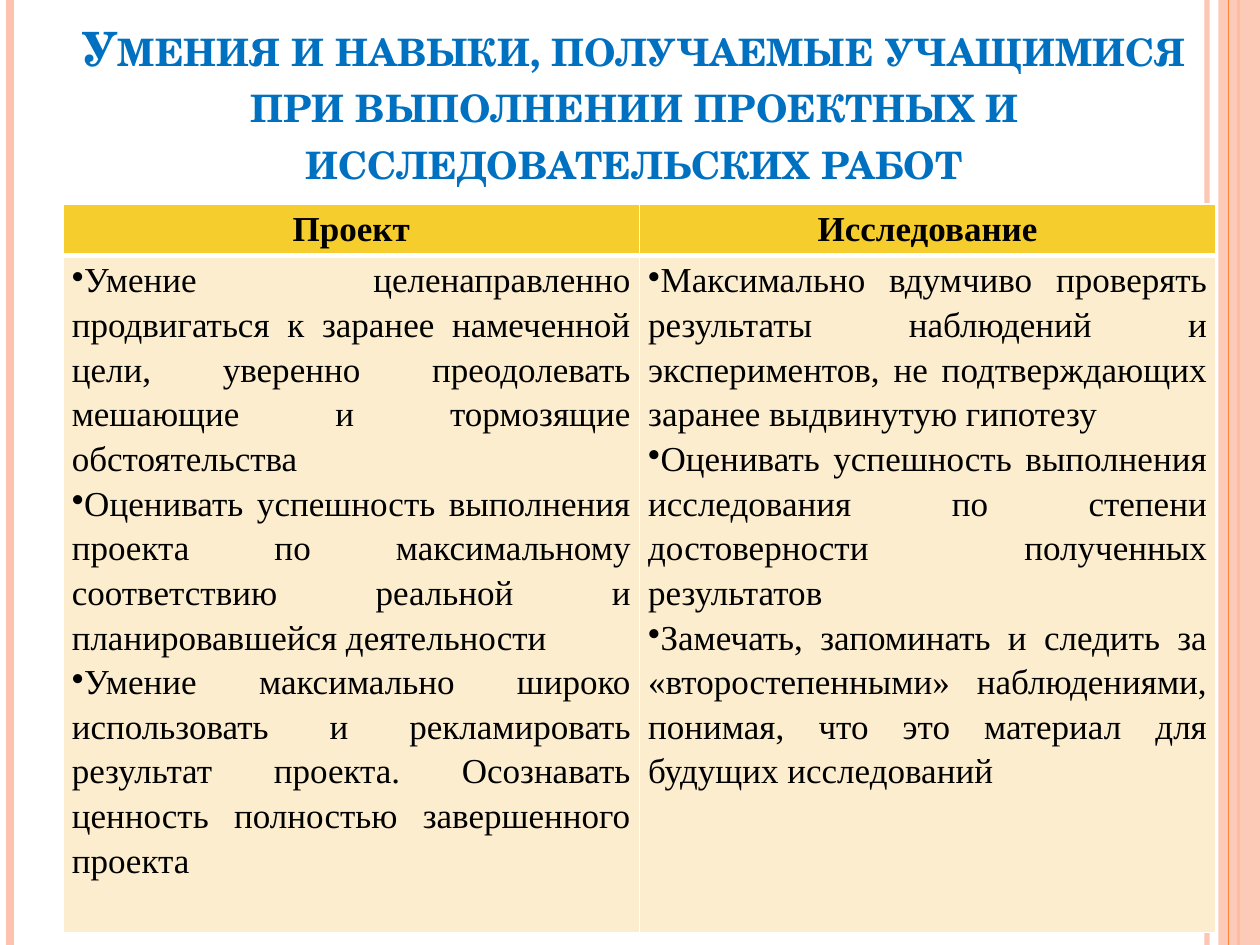
import pptx
import pptx.dml.color
import pptx.enum.shapes
import pptx.enum.text
import pptx.oxml
import pptx.oxml.ns
import pptx.util
from lxml import etree

Inches, Pt = pptx.util.Inches, pptx.util.Pt
ALIGN = pptx.enum.text.PP_ALIGN
qn = pptx.oxml.ns.qn

COLORS = {
    "title": "0070C0",
    "text": "000000",
    "stripe": "FEC3AE",
    "accent": "FE8637",
    "header": "F5CD2D",
    "body": "FBEDCD",
    "border": "FFFFFF",
}

TITLE = "Умения и навыки, получаемые учащимися при выполнении проектных и исследовательских работ"
SKILLS = {
    "Проект": [
        "Умение целенаправленно продвигаться к заранее намеченной цели, уверенно преодолевать "
        "мешающие и тормозящие обстоятельства",
        "Оценивать успешность выполнения проекта по максимальному соответствию реальной и "
        "планировавшейся деятельности",
        "Умение максимально широко использовать и рекламировать результат проекта. Осознавать "
        "ценность полностью завершенного проекта",
    ],
    "Исследование": [
        "Максимально вдумчиво проверять результаты наблюдений и экспериментов, не "
        "подтверждающих заранее выдвинутую гипотезу",
        "Оценивать успешность выполнения исследования по степени достоверности полученных результатов",
        "Замечать, запоминать и следить за «второстепенными» наблюдениями, понимая, что это "
        "материал для будущих исследований",
    ],
}


def rgb(name):
    return pptx.dml.color.RGBColor.from_string(COLORS[name])


def set_opacity(sp, percent):
    clr = sp._element.spPr.find(".//" + qn("a:srgbClr"))
    etree.SubElement(clr, qn("a:alpha")).set("val", str(percent * 1000))


def write(p, text, font="Times New Roman", size=20, color="text", bold=False,
          align=ALIGN.CENTER, spacing=None, bullet=None, small_caps=False):
    p.alignment = align
    if spacing:
        p.line_spacing = spacing
    if bullet:
        pPr = p._p.get_or_add_pPr()
        pPr.set("marL", "0")
        pPr.set("indent", "0")
        etree.SubElement(pPr, qn("a:buChar")).set("char", bullet)
    r = p.add_run()
    r.text = text
    r.font.name, r.font.size, r.font.bold = font, Pt(size), bold
    r.font.color.rgb = rgb(color)
    if small_caps:
        r._r.get_or_add_rPr().set("cap", "small")


class SlideBuilder:
    def __init__(self, prs):
        self.s = prs.slides.add_slide(prs.slide_layouts[6])
        self.height = prs.slide_height

    def stripe(self, x, color, width, opacity=100):
        """Vertical line over the full slide height."""
        cx = self.s.shapes.add_connector(pptx.enum.shapes.MSO_CONNECTOR.STRAIGHT,
                                         Inches(x), 0, Inches(x), self.height)
        cx.line.color.rgb = rgb(color)
        cx.line.width = Pt(width)
        etree.SubElement(cx._element.spPr, qn("a:effectLst"))
        if opacity < 100:
            set_opacity(cx, opacity)

    def band(self, x, width, color, opacity):
        sp = self.s.shapes.add_shape(pptx.enum.shapes.MSO_SHAPE.RECTANGLE,
                                     Inches(x), 0, Inches(width), self.height)
        sp.shadow.inherit = False
        sp.fill.solid()
        sp.fill.fore_color.rgb = rgb(color)
        sp.line.fill.background()
        set_opacity(sp, opacity)

    def title(self, text, x, y, w, h):
        tf = self.s.shapes.add_textbox(Inches(x), Inches(y), Inches(w), Inches(h)).text_frame
        tf.word_wrap = True
        tf.vertical_anchor = pptx.enum.text.MSO_ANCHOR.BOTTOM
        write(tf.paragraphs[0], text, font="TeX Gyre Schola", size=27,
              color="title", bold=True, small_caps=True)

    def cell(self, cell, texts, fill, top=1, bottom=1, **style):
        cell.margin_left = cell.margin_right = Inches(0.07)
        cell.margin_top = cell.margin_bottom = 0
        # Borders come before the fill in the cell properties
        tcPr = cell._tc.get_or_add_tcPr()
        for side, width in (("L", 1), ("R", 1), ("T", top), ("B", bottom)):
            ln = etree.SubElement(tcPr, qn("a:ln" + side), w=str(Pt(width)))
            solid = etree.SubElement(ln, qn("a:solidFill"))
            etree.SubElement(solid, qn("a:srgbClr")).set("val", COLORS["border"])
        cell.fill.solid()
        cell.fill.fore_color.rgb = rgb(fill)
        tf = cell.text_frame
        for i, text in enumerate(texts):
            p = tf.add_paragraph() if i else tf.paragraphs[0]
            write(p, text, spacing=1.15, **style)

    def table(self, columns, x, y, w, row_heights):
        h = sum(row_heights)
        table = self.s.shapes.add_table(2, len(columns), Inches(x), Inches(y),
                                        Inches(w), Inches(h)).table
        table.horz_banding = False
        for row, height in zip(table.rows, row_heights):
            row.height = Inches(height)
        for i, (heading, skills) in enumerate(columns.items()):
            self.cell(table.cell(0, i), [heading], "header", bottom=3, bold=True)
            self.cell(table.cell(1, i), skills, "body", top=3,
                      align=ALIGN.JUSTIFY, bullet="•")


def main():
    prs = pptx.Presentation()
    prs.slide_width, prs.slide_height = Inches(10), Inches(7.5)
    slide = SlideBuilder(prs)

    # Side stripes
    slide.stripe(9.58, "stripe", 3, opacity=93)
    slide.stripe(0.08, "stripe", 4.5)
    slide.stripe(9.83, "accent", 1.5)
    slide.band(9.67, 0.33, "stripe", opacity=87)
    slide.stripe(9.75, "accent", 0.75)

    # Title and comparison table
    slide.title(TITLE, 0.5, 0.21, 9.07, 1.34)
    slide.table(SKILLS, 0.5, 1.62, 9.15, [0.41, 4.95])

    prs.save("out.pptx")


if __name__ == "__main__":
    main()
